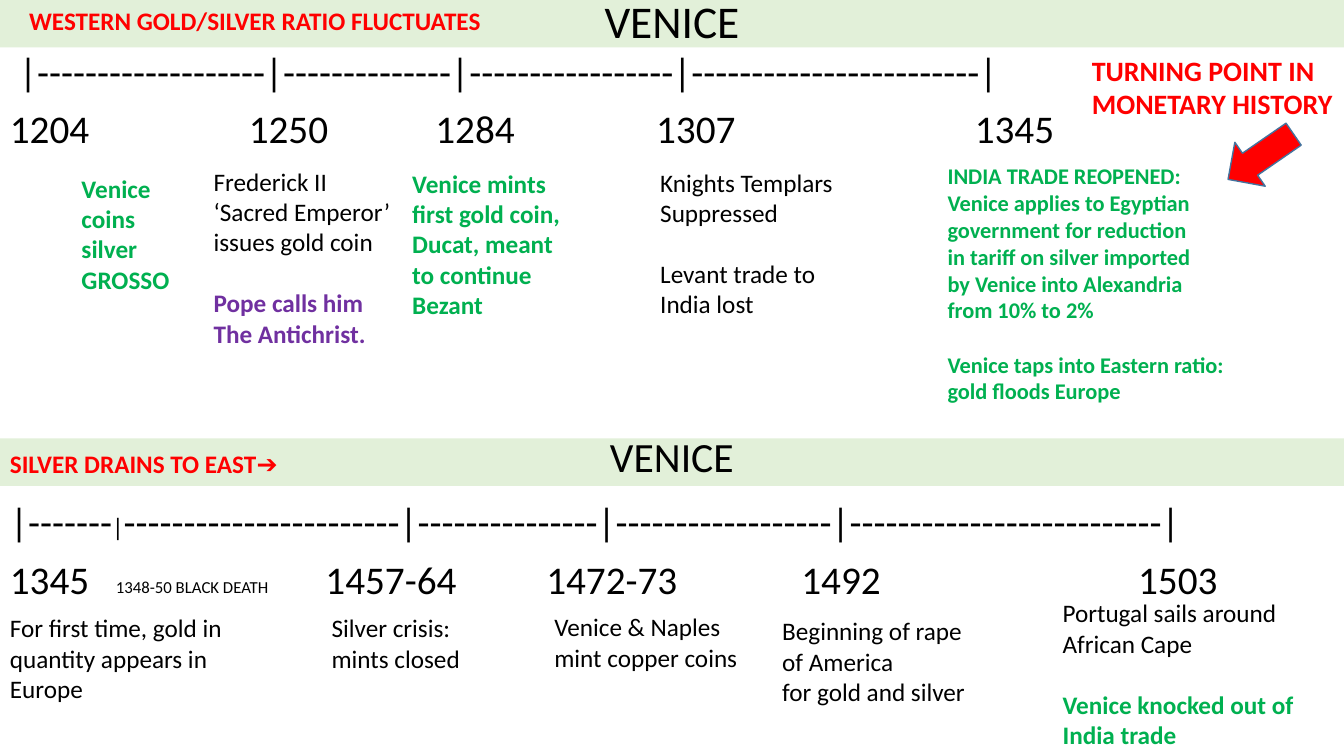
from dataclasses import dataclass
from lxml.etree import SubElement
from pptx import Presentation
from pptx.dml.color import RGBColor
from pptx.enum.shapes import MSO_SHAPE
from pptx.enum.text import MSO_ANCHOR, MSO_AUTO_SIZE, PP_ALIGN
from pptx.oxml.ns import qn
from pptx.util import Inches, Pt


@dataclass(frozen=True)
class Theme:
    font: str = "Calibri"
    black: str = "000000"
    red: str = "FF0000"
    green: str = "00B050"
    purple: str = "7030A0"
    band: str = "E2F0D9"
    edge: str = "43739E"
    title: float = 32.4
    second: float = 29.7
    date: float = 28
    turn: float = 20
    note: float = 18
    trade: float = 16
    small: float = 12


T = Theme()
WIDE, HIGH, BAND = 13.33, 7.5, 0.47
HEAD = "VENICE"

ROWS = [
    (0.09, 0, [("|-------------------|--------------|-----------------|------------------------|", T.date)]),
    (0, 291, [
        ("|-------", T.date), ("|", T.note),
        ("-----------------------|---------------|------------------|--------------------------|", T.date),
    ]),
]

DATES = [
    (0.99, [("1204", 0), ("1250", 2.37), ("1284", 4.22), ("1307", 6.41), ("1345", 9.57)]),
    (5.46, [("1345", 0), ("1457-64", 3.13), ("1472-73", 5.32), ("1492", 7.85), ("1503", 11.19)]),
]

NOTES = [
    ((1.05, 5.67, 1.72, 0.3), T.small, [(T.black, ["1348-50 BLACK DEATH"])]),
    ((2.02, 1.6, 1.99, 1.92), T.note, [
        (T.black, ["Frederick II", "‘Sacred Emperor’", "issues gold coin"]),
        (T.purple, ["Pope calls him", "The Antichrist."]),
    ]),
    ((9.3, 1.56, 2.97, 2.52), T.trade, [
        (T.green, ["INDIA TRADE REOPENED:", "Venice applies to Egyptian",
                   "government for reduction", "in tariff on silver imported",
                   "by Venice into Alexandria", "from 10% to 2%"]),
        (T.green, ["Venice taps into Eastern ratio:", "gold floods Europe"]),
    ]),
    ((6.45, 1.61, 1.97, 1.62), T.note, [
        (T.black, ["Knights Templars", "Suppressed"]),
        (T.black, ["Levant trade to", "India lost"]),
    ]),
    ((3.99, 1.62, 1.68, 1.62), T.note, [
        (T.green, ["Venice mints", "first gold coin,", "Ducat, meant", "to continue", "Bezant"]),
    ]),
    ((10.73, 0.48, 2.61, 0.77), T.turn, [(T.red, ["TURNING POINT IN", "MONETARY HISTORY"])]),
    ((0.71, 1.67, 1.08, 1.31), T.note, [(T.green, ["Venice", "coins", "silver", "GROSSO"])]),
    ((0.19, 0, 4.72, 0.4), T.note, [(T.red, ["WESTERN GOLD/SILVER RATIO FLUCTUATES"])]),
    ((3.19, 6.03, 1.49, 0.71), T.note, [(T.black, ["Silver crisis:", "mints closed"])]),
    ((5.4, 6.02, 2.04, 0.71), T.note, [(T.black, ["Venice & Naples", "mint copper coins"])]),
    ((7.66, 6.06, 2.04, 1.01), T.note, [
        (T.black, ["Beginning of rape", "of America", "for gold and silver"]),
    ]),
    ((10.44, 5.88, 2.51, 1.62), T.note, [
        (T.black, ["Portugal sails around", "African Cape"]),
        (T.green, ["Venice knocked out of", "India trade"]),
    ]),
    ((0, 4.4, 2.94, 0.4), T.note, [(T.red, ["SILVER DRAINS TO EAST➔"])]),
    ((0, 6.03, 2.35, 1.01), T.note, [
        (T.black, ["For first time, gold in", "quantity appears in", "Europe"]),
    ]),
]


def write(para, text, size=T.note, color=T.black, bold=False):
    run = para.add_run()
    run.text = text
    font = run.font
    font.name, font.size, font.bold = T.font, Pt(size), bold
    font.color.rgb = RGBColor.from_string(color)


def place(shape, box):
    shape.left, shape.top, shape.width, shape.height = map(Inches, box)


def paint(shape, color):
    shape.fill.solid()
    shape.fill.fore_color.rgb = RGBColor.from_string(color)


def lines(frame, items):
    for i, item in enumerate(items):
        yield (frame.add_paragraph() if i else frame.paragraphs[0]), item


def head(shape, size, pitch):
    paint(shape, T.band)
    shape.line.fill.background()
    frame = shape.text_frame
    frame.auto_size = MSO_AUTO_SIZE.NONE
    frame.vertical_anchor = MSO_ANCHOR.MIDDLE
    para = frame.paragraphs[0]
    para.alignment, para.line_spacing = PP_ALIGN.CENTER, pitch
    write(para, HEAD, size=size)


def axis(body):
    frame = body.text_frame
    frame.auto_size = MSO_AUTO_SIZE.NONE
    frame.vertical_anchor = MSO_ANCHOR.TOP
    for para, (left, gap, parts) in lines(frame, ROWS):
        para.alignment = PP_ALIGN.LEFT
        para.line_spacing, para.space_before = 0.9, Pt(gap)
        props = para._p.get_or_add_pPr()
        props.set("marL", str(Inches(left)))
        props.set("indent", "0")
        SubElement(props, qn("a:buNone"))
        for text, size in parts:
            write(para, text, size=size)


def note(shapes, box, size, groups):
    frame = shapes.add_textbox(*map(Inches, box)).text_frame
    frame.word_wrap = False
    rows = [(text, color, g > 0 and i == 0)
            for g, (color, texts) in enumerate(groups) for i, text in enumerate(texts)]
    for para, (text, color, apart) in lines(frame, rows):
        if apart:
            para.space_before = Pt(round(size * 1.22, 1))
        write(para, text, size=size, color=color, bold=color != T.black)


def main():
    deck = Presentation()
    deck.slide_width, deck.slide_height = Inches(WIDE), Inches(HIGH)
    slide = deck.slides.add_slide(deck.slide_layouts[1])
    shapes = slide.shapes
    title, body = slide.placeholders
    place(title, (0, 0, WIDE, BAND))
    head(title, T.title, 0.9)
    place(body, (0, BAND, WIDE, HIGH - BAND))
    axis(body)

    bar = shapes.add_shape(MSO_SHAPE.RECTANGLE, *map(Inches, (0, 4.35, WIDE, BAND)))
    bar.shadow.inherit = False
    head(bar, T.second, 0.7)

    arrow = shapes.add_shape(MSO_SHAPE.RIGHT_ARROW, *map(Inches, (12.11, 1.29, 0.79, 0.53)))
    arrow.shadow.inherit = False
    arrow.rotation = 145.4
    paint(arrow, T.red)
    arrow.line.color.rgb = RGBColor.from_string(T.edge)
    arrow.line.width = Pt(1)

    for top, marks in DATES:
        for text, left in marks:
            note(shapes, (left, top, 0.2 + 0.2 * len(text), 0.57), T.date, [(T.black, [text])])
    for box, size, groups in NOTES:
        note(shapes, box, size, groups)
    deck.save("out.pptx")


if __name__ == "__main__":
    main()
